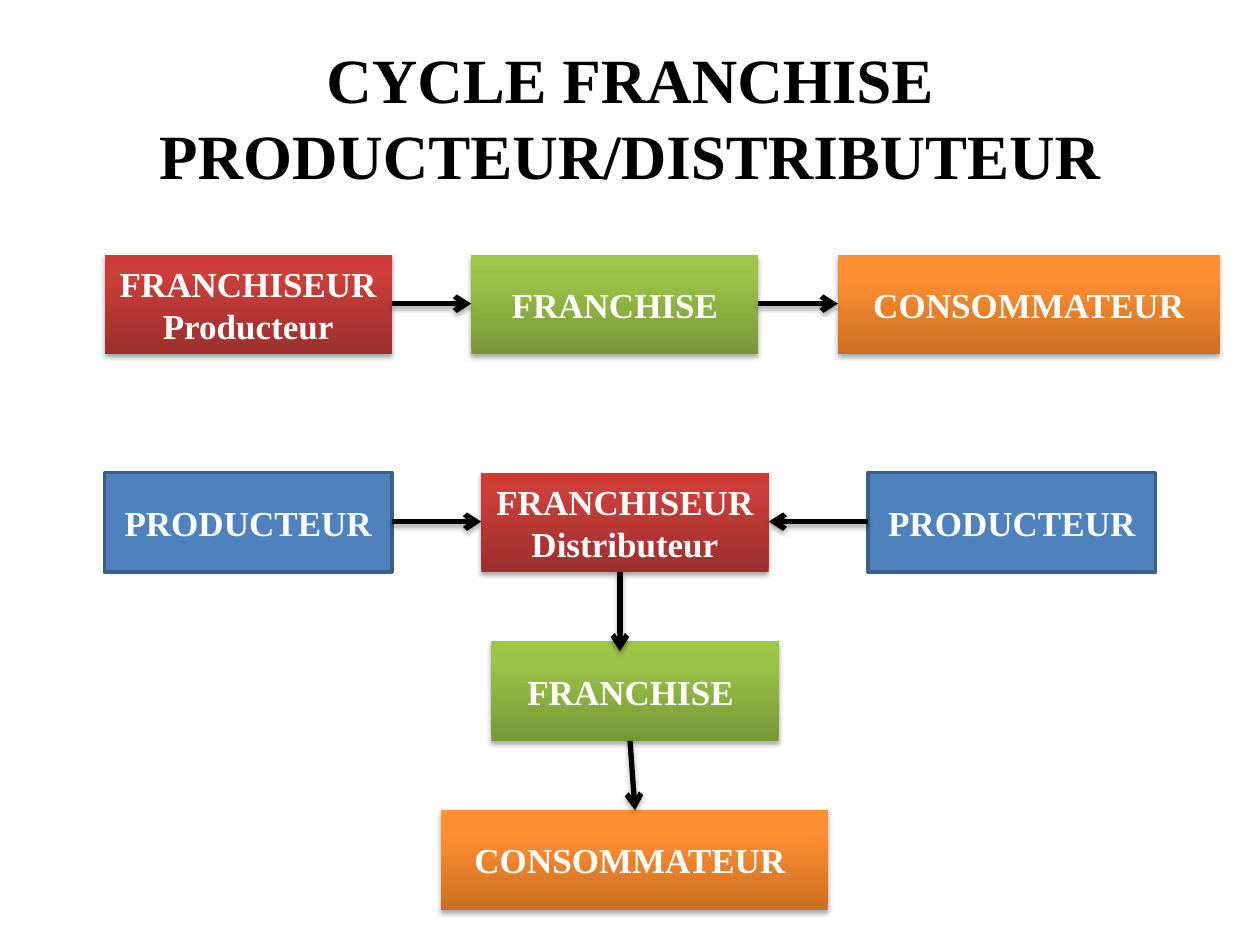
import copy
from dataclasses import dataclass

import pptx
import pptx.dml.color
import pptx.enum.shapes
import pptx.enum.text
import pptx.oxml.ns
import pptx.util
from lxml import etree

Inches, Pt = pptx.util.Inches, pptx.util.Pt
RGB = pptx.dml.color.RGBColor.from_string
qn = pptx.oxml.ns.qn


@dataclass(frozen=True)
class Theme:
    font: str = "Times New Roman"
    title_size: int = 36
    box_size: int = 20
    black: str = "000000"
    white: str = "FFFFFF"
    blue: str = "4F81BD"
    blue_edge: str = "3A5F8C"
    red: tuple = ("9C2F2D", "CB3E3A", "CE3B37")
    green: tuple = ("779737", "9BC348", "9DC746")
    orange: tuple = ("CC6E20", "FF9034", "FF9136")
    stops: tuple = (0, 0.8, 1)
    edge_width: int = 2
    arrow_width: int = 3


class Diagram:
    def __init__(self, slide, theme):
        self.s, self.theme = slide, theme

    def add_lines(self, sp, lines, size, color):
        tf = sp.text_frame
        frame_format = {"word_wrap": True,
                        "vertical_anchor": pptx.enum.text.MSO_ANCHOR.MIDDLE}
        for name, value in frame_format.items():
            setattr(tf, name, value)
        font_format = {"name": self.theme.font, "size": Pt(size), "bold": True}
        for i, line in enumerate(lines):
            p = tf.add_paragraph() if i else tf.paragraphs[0]
            p.alignment = pptx.enum.text.PP_ALIGN.CENTER
            r = p.add_run()
            r.text = line
            for name, value in font_format.items():
                setattr(r.font, name, value)
            r.font.color.rgb = RGB(color)

    def title(self, text, left, top, width, height):
        sp = self.s.shapes.add_textbox(*map(Inches, (left, top, width, height)))
        self.add_lines(sp, [text], self.theme.title_size, self.theme.black)

    def shadow(self, sp):
        """Give a shape or connector a soft shadow below it."""
        sp_pr = sp._element.spPr
        effects = sp_pr.find(qn("a:effectLst"))
        if effects is None:
            effects = etree.SubElement(sp_pr, qn("a:effectLst"))
        outer = etree.SubElement(
            effects, qn("a:outerShdw"), blurRad=str(Pt(3.1)), dist=str(Pt(1.8)),
            dir="5400000", rotWithShape="0")
        color = etree.SubElement(outer, qn("a:srgbClr"), val=self.theme.black)
        etree.SubElement(color, qn("a:alpha"), val="35000")

    def gradient(self, sp, colors):
        """Fill from bottom to top with three colours."""
        sp.fill.gradient()
        sp.fill.gradient_angle = 90
        stop_list = sp._element.spPr.find(qn("a:gradFill")).find(qn("a:gsLst"))
        stop_list.append(copy.deepcopy(stop_list[-1]))
        for stop, position, color in zip(sp.fill.gradient_stops,
                                         self.theme.stops, colors):
            stop.position = position
            stop.color.rgb = RGB(color)

    def box(self, lines, fill, left, top, width=2.28, height=0.79):
        sp = self.s.shapes.add_shape(
            pptx.enum.shapes.MSO_SHAPE.RECTANGLE,
            *map(Inches, (left, top, width, height)))
        sp.shadow.inherit = False
        if isinstance(fill, tuple):
            self.gradient(sp, fill)
            sp.line.fill.background()
            self.shadow(sp)
        else:
            sp.fill.solid()
            sp.fill.fore_color.rgb = RGB(fill)
            sp.line.color.rgb = RGB(self.theme.blue_edge)
            sp.line.width = Pt(self.theme.edge_width)
        self.add_lines(sp, lines, self.theme.box_size, self.theme.white)

    def arrow(self, x1, y1, x2, y2):
        c = self.s.shapes.add_connector(
            pptx.enum.shapes.MSO_CONNECTOR.STRAIGHT,
            *map(Inches, (x1, y1, x2, y2)))
        c.line.color.rgb = RGB(self.theme.black)
        c.line.width = Pt(self.theme.arrow_width)
        etree.SubElement(c._element.spPr.find(qn("a:ln")),
                         qn("a:tailEnd"), type="arrow")
        self.shadow(c)


def main():
    prs = pptx.Presentation()
    prs.slide_width, prs.slide_height = Inches(10), Inches(7.5)
    theme = Theme()
    d = Diagram(prs.slides.add_slide(prs.slide_layouts[6]), theme)

    d.title("CYCLE FRANCHISE PRODUCTEUR/DISTRIBUTEUR", 0.5, 0.3, 9, 1.25)

    producer_row, distributor_row = 2.02, 3.75
    d.box(["FRANCHISEUR", "Producteur"], theme.red, 0.83, producer_row)
    d.box(["FRANCHISE"], theme.green, 3.74, producer_row)
    d.box(["CONSOMMATEUR"], theme.orange, 6.65, producer_row, 3.03)

    for left in (0.83, 6.89):
        d.box(["PRODUCTEUR"], theme.blue, left, distributor_row)
    d.box(["FRANCHISEUR", "Distributeur"], theme.red, 3.82, distributor_row)
    d.box(["FRANCHISE "], theme.green, 3.9, 5.09)
    d.box(["CONSOMMATEUR "], theme.orange, 3.5, 6.43, 3.07)

    producer_mid, distributor_mid = producer_row + 0.39, distributor_row + 0.39
    for x1, x2, y in ((3.11, 3.74, producer_mid), (6.02, 6.65, producer_mid),
                      (3.11, 3.82, distributor_mid),
                      (6.89, 6.1, distributor_mid)):
        d.arrow(x1, y, x2, y)
    d.arrow(4.92, 4.54, 4.92, 5.17)
    d.arrow(5, 5.88, 5.04, 6.43)

    prs.save("out.pptx")


if __name__ == "__main__":
    main()
